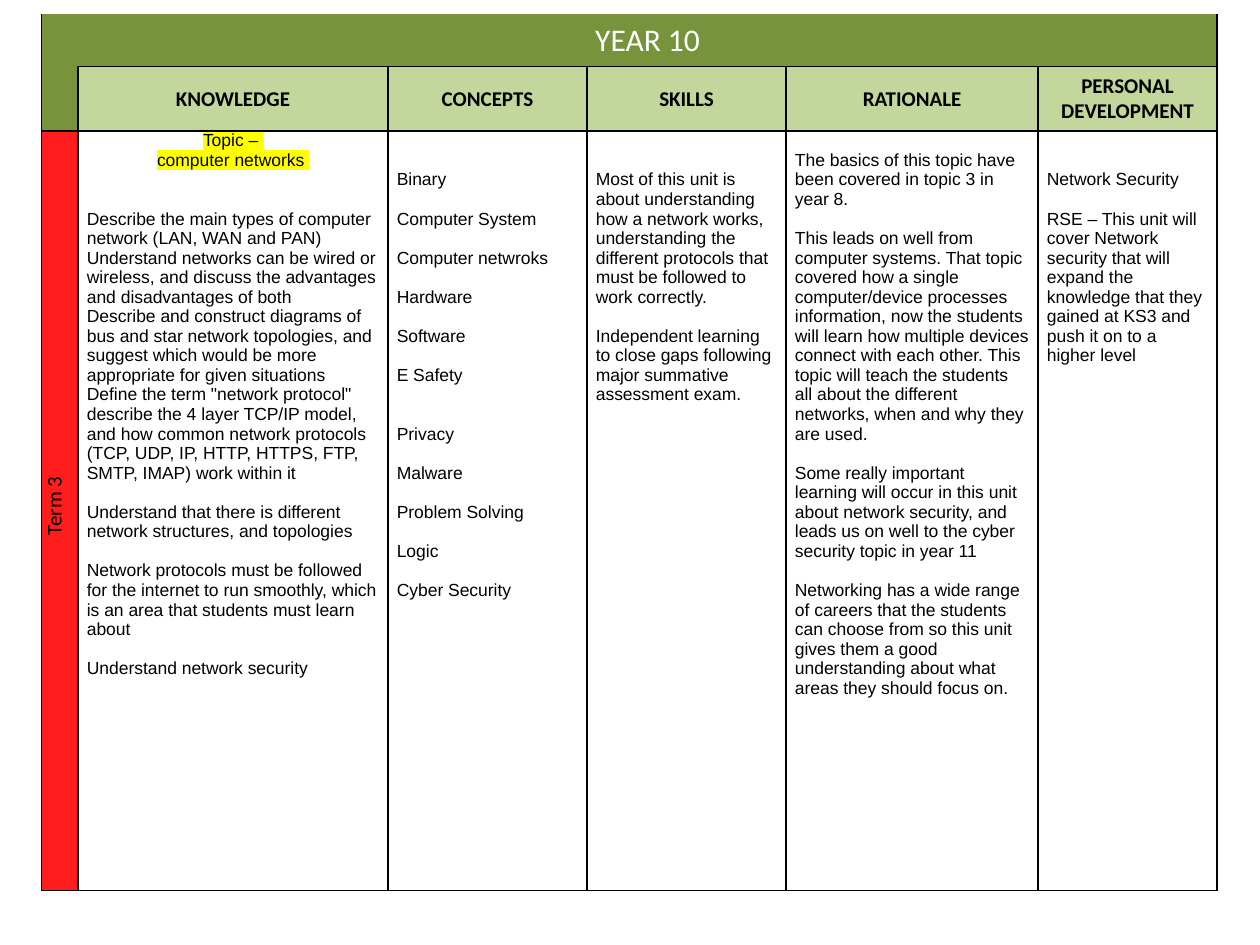
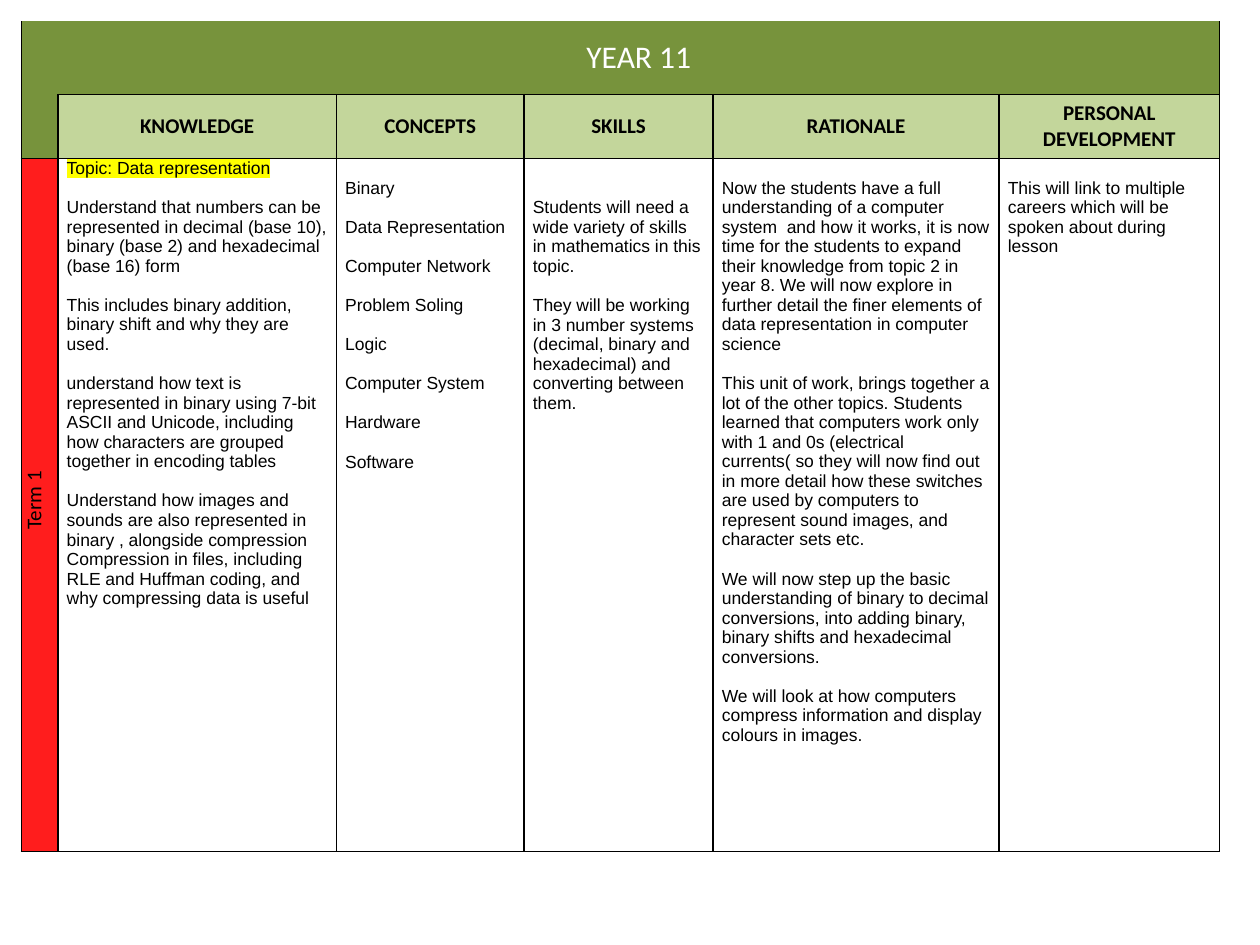
from lxml import etree
from pptx import Presentation
from pptx.dml.color import RGBColor
from pptx.enum.text import MSO_ANCHOR, PP_ALIGN
from pptx.oxml.ns import qn
from pptx.util import Inches, Pt

CENTER, LEFT = PP_ALIGN.CENTER, PP_ALIGN.LEFT
MIDDLE, TOP = MSO_ANCHOR.MIDDLE, MSO_ANCHOR.TOP

GREEN = RGBColor(0x77, 0x93, 0x3C)
PALE_GREEN = RGBColor(0xC3, 0xD6, 0x9B)
RED = RGBColor(0xFF, 0x1D, 0x1D)
YELLOW = RGBColor(0xFF, 0xFF, 0x00)
WHITE = RGBColor(0xFF, 0xFF, 0xFF)
BLACK = RGBColor(0x00, 0x00, 0x00)

LINE = 11.2  # height of one body line in points
HEADINGS = ["KNOWLEDGE", "CONCEPTS", "SKILLS", "RATIONALE", "PERSONAL DEVELOPMENT"]

# Body cells: a plain paragraph follows one line of space,
# a pair gives its own number of lines of space.
YEARS = [
    {
        "title": "YEAR 10", "term": "Term 3", "origin": (0.33, 0.11),
        "cols": [0.29, 2.46, 1.58, 1.58, 2, 1.42], "rows": [0.42, 0.51, 6.03],
        "topic": ["Topic – ", "computer networks "], "topic_align": CENTER,
        "body": [
            [(2, "Describe the main types of computer network (LAN, WAN and PAN)\v"
                 "Understand networks can be wired or wireless, and discuss the advantages "
                 "and disadvantages of both\v"
                 "Describe and construct diagrams of bus and star network topologies, and "
                 "suggest which would be more appropriate for given situations\v"
                 "Define the term \"network protocol\"\v"
                 "describe the 4 layer TCP/IP model, and how common network protocols "
                 "(TCP, UDP, IP, HTTP, HTTPS, FTP, SMTP, IMAP) work within it"),
             "Understand that there is different network structures, and topologies",
             "Network protocols must be followed for the internet to run smoothly, which "
             "is an area that students must learn about",
             "Understand network security"],
            [(2, "Binary"), "Computer System", "Computer netwroks", "Hardware", "Software",
             "E Safety", (2, "Privacy"), "Malware", "Problem Solving", "Logic",
             "Cyber Security"],
            [(2, "Most of this unit is about understanding how a network works, "
                 "understanding the different protocols that must be followed to work "
                 "correctly."),
             "Independent learning to close gaps following major summative assessment exam."],
            ["The basics of this topic have been covered in topic 3 in year 8.",
             "This leads on well from computer systems. That topic covered how a single "
             "computer/device processes information, now the students will learn how "
             "multiple devices connect with each other. This topic will teach the students "
             "all about the different networks, when and why they are used.",
             "Some really important learning will occur in this unit about network "
             "security, and leads us on well to the cyber security topic in year 11",
             "Networking has a wide range of careers that the students can choose from so "
             "this unit gives them a good understanding about what areas they should focus "
             "on."],
            [(2, "Network Security"),
             "RSE – This unit will cover Network security that will expand the knowledge "
             "that they gained at KS3 and push it on to a higher level"],
        ],
    },
    {
        "title": "YEAR 11", "term": "Term 1", "origin": (0.17, 0.17),
        "cols": [0.29, 2.21, 1.49, 1.5, 2.27, 1.75], "rows": [0.58, 0.51, 5.5],
        "topic": ["Topic: Data representation"], "topic_align": LEFT,
        "body": [
            ["Understand that numbers can be represented in decimal (base 10), binary "
             "(base 2) and hexadecimal (base 16) form",
             "This includes binary addition, binary shift and why they are used.",
             "understand how text is represented in binary using 7-bit ASCII and Unicode, "
             "including how characters are grouped together in encoding tables",
             "Understand how images and sounds are also represented in binary , alongside "
             "compression",
             (0, "Compression in files, including RLE and Huffman coding, and why "
                 "compressing data is useful")],
            ["Binary", "Data Representation", "Computer Network", "Problem Soling", "Logic",
             "Computer System", "Hardware", "Software"],
            [(2, "Students will need a wide variety of skills in mathematics in this topic."),
             "They will be working in 3 number systems (decimal, binary and hexadecimal) "
             "and converting between them."],
            ["Now the students have a full understanding of a computer system  and how it "
             "works, it is now time for the students to expand their knowledge from topic 2 "
             "in year 8. We will now explore in further detail the finer elements of data "
             "representation in computer science",
             "This unit of work, brings together a lot of the other topics. Students "
             "learned that computers work only with 1 and 0s (electrical currents( so they "
             "will now find out in more detail how these switches are used by computers to "
             "represent sound images, and character sets etc.",
             "We will now step up the basic understanding of binary to decimal conversions, "
             "into adding binary, binary shifts and hexadecimal conversions.",
             "We will look at how computers compress information and display colours in "
             "images."],
            ["This will link to multiple careers which will be spoken about during lesson"],
        ],
    },
]


def style_cell(cell, fill, sides, anchor):
    """Set fill, margins and anchor, and draw the borders named in sides."""
    cell.fill.solid()
    cell.fill.fore_color.rgb = fill
    cell.margin_left = cell.margin_right = Inches(0.07)
    cell.margin_top = cell.margin_bottom = 0
    cell.vertical_anchor = anchor
    tcPr = cell._tc.get_or_add_tcPr()
    for i, side in enumerate("LRTB"):
        ln = etree.Element(qn("a:ln" + side), w=str(Pt(1)))
        if side in sides:
            solid = etree.SubElement(ln, qn("a:solidFill"))
            etree.SubElement(solid, qn("a:srgbClr"), val=str(BLACK))
        else:
            etree.SubElement(ln, qn("a:noFill"))
        tcPr.insert(i, ln)


def write(p, text, size, font, color=BLACK, bold=False, align=CENTER):
    """Fill one paragraph with text in a single style."""
    p.text = text
    p.alignment = align
    p.font.size = Pt(size)
    p.font.name = font
    p.font.bold = bold
    p.font.color.rgb = color


prs = Presentation()
prs.slide_width, prs.slide_height = Inches(10), Inches(7.5)

for year in YEARS:
    s = prs.slides.add_slide(prs.slide_layouts[6])

    # Table grid
    cols, rows = year["cols"], year["rows"]
    x, y = year["origin"]
    table = s.shapes.add_table(len(rows), len(cols), Inches(x), Inches(y),
                               Inches(sum(cols)), Inches(sum(rows))).table
    table.first_row = table.horz_banding = False
    for column, width in zip(table.columns, cols):
        column.width = Inches(width)
    for row, height in zip(table.rows, rows):
        row.height = Inches(height)

    # Green corner and year band
    table.cell(0, 0).merge(table.cell(1, 0))
    table.cell(0, 1).merge(table.cell(0, len(cols) - 1))
    for r in range(2):
        style_cell(table.cell(r, 0), GREEN, "LB", MIDDLE)
    for c in range(1, len(cols)):
        style_cell(table.cell(0, c), GREEN, "RB", MIDDLE)
    write(table.cell(0, 1).text_frame.paragraphs[0], year["title"], 18, "Calibri", WHITE)

    # Column headings
    for c, heading in enumerate(HEADINGS, 1):
        cell = table.cell(1, c)
        style_cell(cell, PALE_GREEN, "LRTB", MIDDLE)
        write(cell.text_frame.paragraphs[0], heading, 12, "Calibri", bold=True)

    # Term label, turned upwards
    cell = table.cell(2, 0)
    style_cell(cell, RED, "LRTB", MIDDLE)
    cell._tc.get_or_add_tcPr().set("vert", "vert270")
    p = cell.text_frame.paragraphs[0]
    write(p, year["term"], 12, "Calibri")
    p._p.get_or_add_pPr().set("marL", str(Inches(0.08)))

    # Body cells, the first one opening with the highlighted topic
    for c, items in enumerate(year["body"], 1):
        cell = table.cell(2, c)
        style_cell(cell, WHITE, "LRTB", TOP)
        topic = year["topic"] if c == 1 else []
        tf = cell.text_frame
        for i, item in enumerate([(0, line) for line in topic] + items):
            gap, text = (1, item) if isinstance(item, str) else item
            p = tf.add_paragraph() if i else tf.paragraphs[0]
            in_topic = i < len(topic)
            write(p, text, 10, "Arial", align=year["topic_align"] if in_topic else LEFT)
            if i:
                p.space_before = Pt(gap * LINE)
            else:
                cell.margin_top = Pt(gap * LINE)
            if in_topic:
                rPr = p.runs[0]._r.get_or_add_rPr()
                highlight = etree.SubElement(rPr, qn("a:highlight"))
                etree.SubElement(highlight, qn("a:srgbClr"), val=str(YELLOW))

prs.save("out.pptx")
